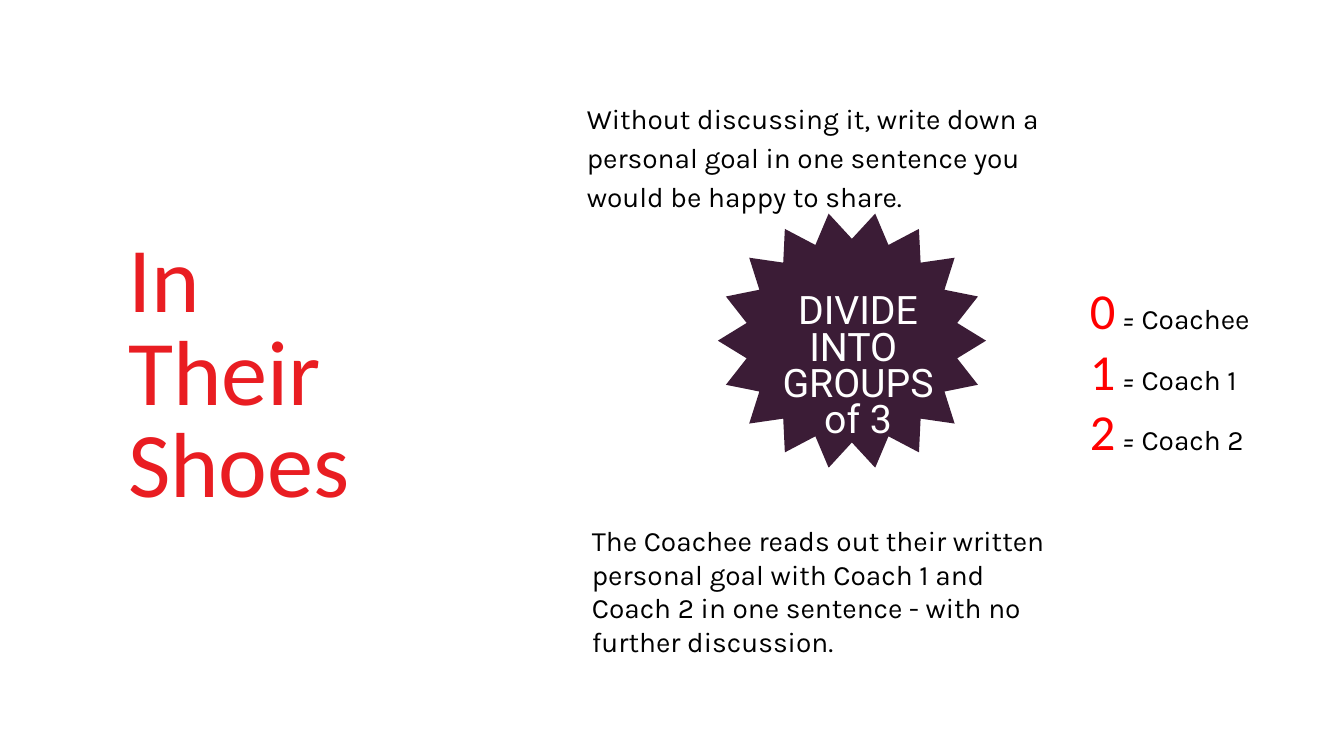
import math

import pptx
import pptx.dml.color
import pptx.enum.shapes
import pptx.enum.text
import pptx.util
from pptx.util import Inches

RED = pptx.dml.color.RGBColor(0xE9, 0x1D, 0x22)
BRIGHT_RED = pptx.dml.color.RGBColor(0xFF, 0x00, 0x00)
PLUM = pptx.dml.color.RGBColor(0x3B, 0x1C, 0x36)
BLACK = pptx.dml.color.RGBColor(0, 0, 0)
WHITE = pptx.dml.color.RGBColor(0xFF, 0xFF, 0xFF)

ALIGN = pptx.enum.text.PP_ALIGN
ANCHOR = pptx.enum.text.MSO_ANCHOR

GOAL = (
    "Without discussing it, write down a personal goal in one sentence "
    "you would be happy to share."
)
READING = (
    "The Coachee reads out their written personal goal with Coach 1 and "
    "Coach 2 in one sentence - with no further discussion."
)
ROLES = [("0", "Coachee"), ("1", "Coach 1"), ("2", "Coach 2")]


def set_font(font, name, size, color, italic=None):
    font.name = name
    font.size = pptx.util.Pt(size)
    font.color.rgb = color
    font.italic = italic


def paint(shape, color):
    shape.fill.solid()
    shape.fill.fore_color.rgb = color
    shape.line.fill.background()
    shape.shadow.inherit = False


def add_heading(slide):
    heading = slide.shapes.title
    heading.left, heading.top = Inches(1.27), Inches(0.36)
    heading.width, heading.height = Inches(4.35), Inches(6.77)
    frame = heading.text_frame
    frame.text = "In \vTheir \vShoes"
    frame.word_wrap = True
    frame.auto_size = pptx.enum.text.MSO_AUTO_SIZE.NONE
    frame.vertical_anchor = ANCHOR.MIDDLE
    frame.margin_left = frame.margin_right = 0
    frame.margin_top = frame.margin_bottom = 0
    paragraph = frame.paragraphs[0]
    paragraph.alignment = ALIGN.LEFT
    paragraph.line_spacing = pptx.util.Pt(66)
    set_font(paragraph.font, "Calibri", 66, RED)


def add_panel(slide, left, top, width, height):
    panel = slide.shapes.add_shape(
        pptx.enum.shapes.MSO_SHAPE.RECTANGLE,
        Inches(left), Inches(top), Inches(width), Inches(height),
    )
    paint(panel, WHITE)
    frame = panel.text_frame
    frame.word_wrap = True
    frame.vertical_anchor = ANCHOR.MIDDLE
    frame.margin_left = frame.margin_right = Inches(0.12)
    frame.margin_top = frame.margin_bottom = Inches(0.08)
    return frame


def add_instruction(slide, text, left, top, width, height, spacing=1.0):
    paragraph = add_panel(slide, left, top, width, height).paragraphs[0]
    paragraph.text = text
    paragraph.alignment = ALIGN.LEFT
    paragraph.line_spacing = spacing
    set_font(paragraph.font, "Karla", 20, BLACK)


def add_starburst(slide, center_x, center_y, tips=18):
    radii = [(1.33, 1.28), (1.06, 1.01)]
    points = []
    for corner in range(2 * tips):
        angle = math.pi * corner / tips
        radius_x, radius_y = radii[corner % 2]
        points.append((
            Inches(center_x + radius_x * math.cos(angle)),
            Inches(center_y + radius_y * math.sin(angle)),
        ))
    outline = slide.shapes.build_freeform(*points[0])
    outline.add_line_segments(points[1:], close=True)
    paint(outline.convert_to_shape(), PLUM)


def add_starburst_label(slide):
    label = slide.shapes.add_textbox(
        Inches(7.57), Inches(2.89), Inches(1.88), Inches(1.19)
    )
    frame = label.text_frame
    frame.word_wrap = True
    frame.text = "DIVIDE INTO \nGROUPS\vof 3"
    for paragraph in frame.paragraphs:
        paragraph.alignment = ALIGN.CENTER
        paragraph.line_spacing = pptx.util.Pt(26)
        set_font(paragraph.font, "Roboto", 28, WHITE)


def add_roles(slide):
    frame = add_panel(slide, 10.69, 2.7, 2.15, 1.94)
    for index, (number, role) in enumerate(ROLES):
        paragraph = frame.add_paragraph() if index else frame.paragraphs[0]
        paragraph.alignment = ALIGN.LEFT
        for text, name, size, color, italic in (
            (number, "Calibri", 36, BRIGHT_RED, False),
            (" = ", "Karla", 20, BLACK, True),
            (role, "Karla", 20, BLACK, False),
        ):
            run = paragraph.add_run()
            run.text = text
            set_font(run.font, name, size, color, italic)


def main():
    presentation = pptx.Presentation()
    presentation.slide_width = Inches(13.33)
    presentation.slide_height = Inches(7.5)
    slide = presentation.slides.add_slide(presentation.slide_layouts[5])

    add_heading(slide)
    add_instruction(slide, GOAL, 5.7, 0.49, 5.04, 2.09, spacing=1.15)
    add_starburst(slide, 8.45, 3.38)
    add_starburst_label(slide)
    add_roles(slide)
    add_instruction(slide, READING, 5.75, 4.64, 4.81, 2.44)

    presentation.save("out.pptx")


if __name__ == "__main__":
    main()
